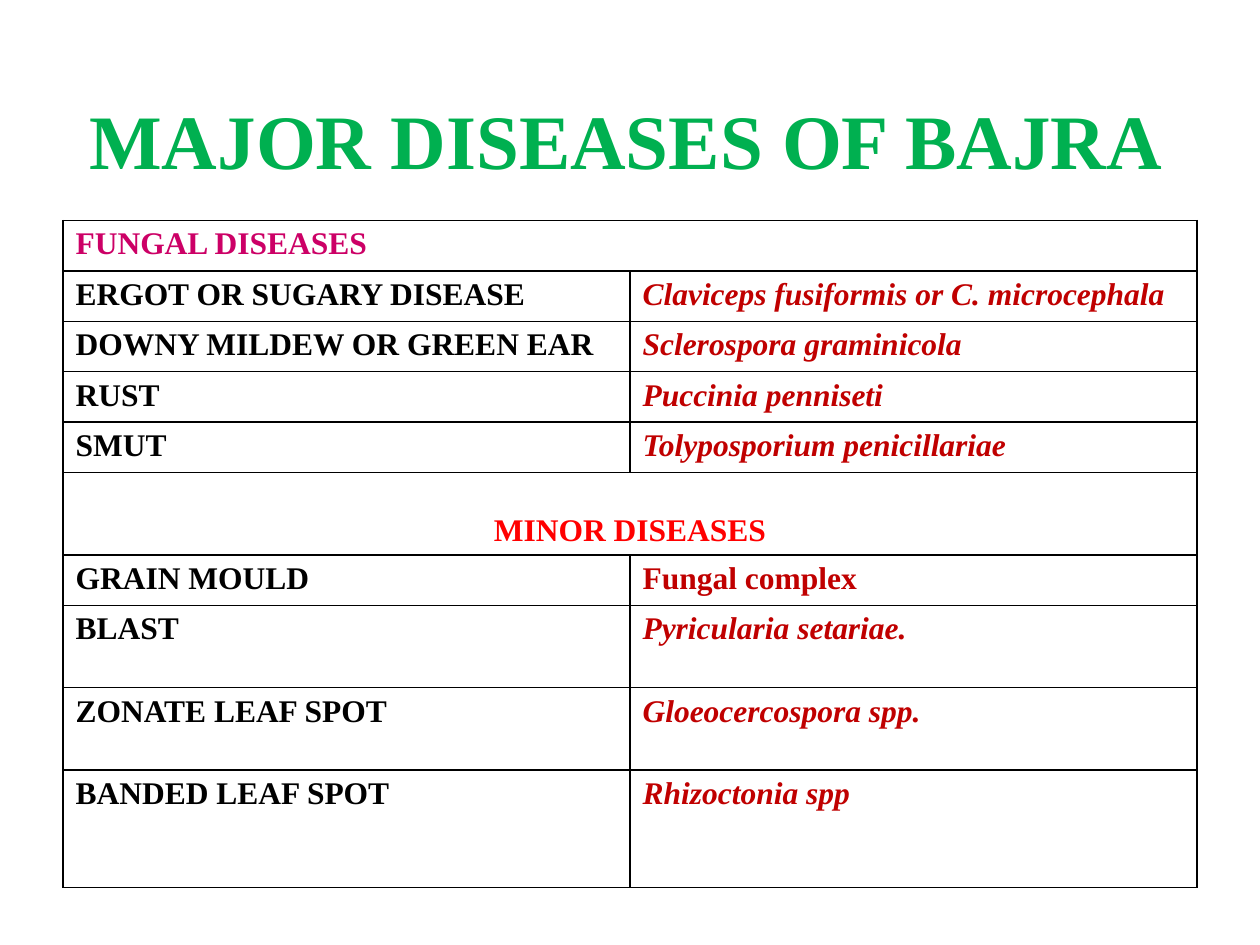
import pptx
import pptx.util
import pptx.dml.color
import pptx.enum.text
import pptx.oxml
import pptx.oxml.ns

Pt = pptx.util.Pt
ALIGN = pptx.enum.text.PP_ALIGN
ANCHOR = pptx.enum.text.MSO_ANCHOR


def style(paragraph, size, color, italic=False):
    font = paragraph.font
    font.name = "Times New Roman"
    font.size = Pt(size)
    font.bold = True
    font.italic = italic
    font.color.rgb = pptx.dml.color.RGBColor.from_string(color)


def draw_borders(cell):
    properties = cell._tc.get_or_add_tcPr()
    for side in ("lnL", "lnR", "lnT", "lnB"):
        properties.append(pptx.oxml.parse_xml(
            f'<a:{side} {pptx.oxml.ns.nsdecls("a")} w="12700"><a:solidFill>'
            f'<a:srgbClr val="000000"/></a:solidFill></a:{side}>'))


presentation = pptx.Presentation()
presentation.slide_width = Pt(720)
presentation.slide_height = Pt(540)
slide = presentation.slides.add_slide(presentation.slide_layouts[5])

# Title
title = slide.shapes.title
title.left, title.top, title.width, title.height = Pt(34), Pt(34), Pt(648), Pt(90)
title.text_frame.text = "MAJOR DISEASES OF BAJRA"
title.text_frame.vertical_anchor = ANCHOR.MIDDLE
title.text_frame.paragraphs[0].alignment = ALIGN.CENTER
style(title.text_frame.paragraphs[0], 44, "00B050")

# Row height, disease, pathogen (None marks a heading across both columns)
rows = [
    (28.8, "FUNGAL DISEASES", None),
    (28.8, "ERGOT OR SUGARY DISEASE", "Claviceps fusiformis or C. microcephala"),
    (28.8, "DOWNY MILDEW OR GREEN EAR", "Sclerospora graminicola"),
    (28.8, "RUST", "Puccinia penniseti"),
    (28.8, "SMUT", "Tolyposporium penicillariae"),
    (47.1, "MINOR DISEASES", None),
    (28.8, "GRAIN MOULD", "Fungal complex"),
    (47.1, "BLAST", "Pyricularia setariae."),
    (47.1, "ZONATE LEAF SPOT", "Gloeocercospora spp."),
    (67.1, "BANDED LEAF SPOT", "Rhizoctonia spp"),
]
heading_colors = {"FUNGAL DISEASES": "CC0066", "MINOR DISEASES": "FF0000"}

# Disease table
total_height = sum(height for height, _, _ in rows)
diseases = slide.shapes.add_table(
    len(rows), 2, Pt(36), Pt(126), Pt(648), Pt(total_height)).table
diseases.first_row = False
diseases.horz_banding = False

for index, (height, disease, pathogen) in enumerate(rows):
    diseases.rows[index].height = Pt(height)
    disease_cell, pathogen_cell = diseases.cell(index, 0), diseases.cell(index, 1)
    for cell in (disease_cell, pathogen_cell):
        draw_borders(cell)
        cell.fill.background()

    disease_cell.text = disease
    style(disease_cell.text_frame.paragraphs[0], 18,
          heading_colors.get(disease, "000000"))
    if pathogen is None:
        disease_cell.merge(pathogen_cell)
    else:
        pathogen_cell.text = pathogen
        style(pathogen_cell.text_frame.paragraphs[0], 18, "C00000",
              italic=pathogen != "Fungal complex")

# The second heading sits centred at the foot of its row
minor_heading = diseases.cell(5, 0)
minor_heading.vertical_anchor = ANCHOR.BOTTOM
minor_heading.text_frame.paragraphs[0].alignment = ALIGN.CENTER

presentation.save("out.pptx")
